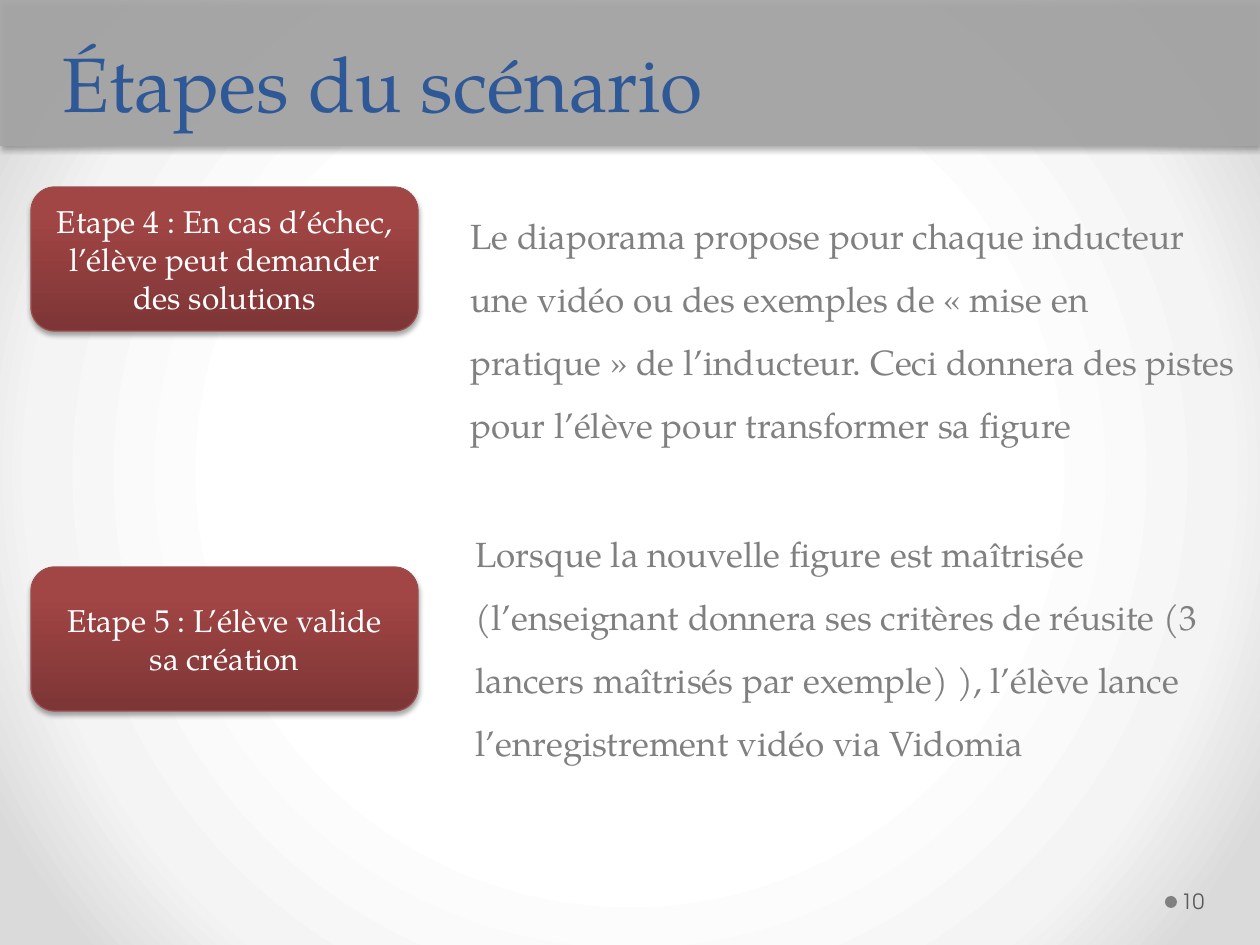
"""Build the slide on steps 4 and 5 of the teaching scenario."""
from pptx import Presentation
from pptx import util as u
from pptx.dml.color import RGBColor
from pptx.enum import shapes, text
from pptx.oxml import parse_xml
from pptx.oxml.ns import nsdecls

PX = 914400 / 126
NO_BREAK = chr(160)
SERIF, SANS = "TeX Gyre Pagella", "TeX Gyre Adventor"
BLUE = RGBColor(0x2F, 0x58, 0x97)
WHITE = RGBColor(0xFF, 0xFF, 0xFF)
BAND_GRAY = RGBColor(0xA6, 0xA6, 0xA6)
GRAY = RGBColor(0x80, 0x80, 0x80)
DARK_GRAY = RGBColor(0x59, 0x59, 0x59)
LIGHT_GRAY = RGBColor(0xF4, 0xF4, 0xF4)
EDGE_GRAY = RGBColor(0xDA, 0xDA, 0xDA)
DEEP_RED = RGBColor(0x7D, 0x35, 0x35)
RED = RGBColor(0xA2, 0x45, 0x45)
TOP_RED = RGBColor(0xA4, 0x43, 0x43)
RED_LINE = RGBColor(0x9A, 0x4E, 0x4E)

STEPS = [
    (187, "Etape 4 : En cas d’échec, l’élève peut demander des solutions",
     (458, 187), "Le diaporama propose pour chaque inducteur une vidéo ou des exemples "
     f"de «{NO_BREAK}mise en pratique{NO_BREAK}» de l’inducteur. Ceci donnera des pistes "
     "pour l’élève pour transformer sa figure"),
    (567, "Etape 5 : L’élève valide sa création",
     (463, 505), "Lorsque la nouvelle figure est maîtrisée (l’enseignant donnera ses "
     "critères de réusite (3 lancers maîtrisés par exemple) ), l’élève lance "
     "l’enregistrement vidéo via Vidomia"),
]


def px(*lengths):
    return [u.Emu(round(length * PX)) for length in lengths]


def gradient(stops, direction):
    stop_xml = "".join(
        f'<a:gs pos="{pos * 1000}"><a:srgbClr val="{color}"/></a:gs>' for pos, color in stops)
    return parse_xml(f'<a:gradFill {nsdecls("a")} rotWithShape="1">'
                     f'<a:gsLst>{stop_xml}</a:gsLst>{direction}</a:gradFill>')


def add_shadow(shape):
    shape._element.spPr.append(parse_xml(
        f'<a:effectLst {nsdecls("a")}><a:outerShdw blurRad="{u.Pt(3.1)}" dist="{u.Pt(1.8)}" '
        'dir="5400000" rotWithShape="0"><a:srgbClr val="000000"><a:alpha val="35000"/>'
        '</a:srgbClr></a:outerShdw></a:effectLst>'))


def write(frame, words, size, color, font=SERIF, align=text.PP_ALIGN.LEFT,
          anchor=text.MSO_ANCHOR.TOP, spacing=None):
    frame.word_wrap = True
    frame.vertical_anchor = anchor
    paragraph = frame.paragraphs[0]
    paragraph.alignment = align
    paragraph.line_spacing = spacing
    run = paragraph.add_run()
    run.text = words
    run.font.size = u.Pt(size)
    run.font.name = font
    run.font.color.rgb = color


def paint_background(slide):
    slide.background.fill.solid()
    properties = slide._element.xpath("./p:cSld/p:bg/p:bgPr")[0]
    glow = gradient([(50, WHITE), (76, LIGHT_GRAY), (92, EDGE_GRAY)],
                    '<a:path path="circle"><a:fillToRect l="50000" t="50000" '
                    'r="50000" b="50000"/></a:path>')
    properties.replace(properties[0], glow)


def add_plain(slide, kind, box, color):
    shape = slide.shapes.add_shape(kind, *px(*box))
    shape.shadow.inherit = False
    shape.fill.solid()
    shape.fill.fore_color.rgb = color
    shape.line.fill.background()
    return shape


def add_band(slide):
    band = add_plain(slide, shapes.MSO_SHAPE.RECTANGLE, (0, 0, 1260, 146), BAND_GRAY)
    band_color = band._element.spPr.xpath("./a:solidFill/a:srgbClr")[0]
    band_color.append(parse_xml(f'<a:alpha {nsdecls("a")} val="92000"/>'))
    band._element.spPr.remove(band._element.spPr.xpath("./a:effectLst")[0])
    add_shadow(band)
    slide.shapes._spTree.insert(2, band._element)


def add_title(slide, words):
    title = slide.shapes.title
    title.left, title.top, title.width, title.height = px(50, 12, 1177, 122)
    write(title.text_frame, words, 44, BLUE, anchor=text.MSO_ANCHOR.BOTTOM, spacing=u.Pt(58))


def add_page_number(slide, number):
    add_plain(slide, shapes.MSO_SHAPE.OVAL, (1165, 896, 12, 12), GRAY)
    box = slide.shapes.add_textbox(*px(1177, 876, 77, 50))
    box.text_frame.margin_left, box.text_frame.margin_right = px(4, 6)
    write(box.text_frame, number, 12, DARK_GRAY, SANS, anchor=text.MSO_ANCHOR.MIDDLE)


def add_step(slide, top, words):
    step = slide.shapes.add_shape(shapes.MSO_SHAPE.ROUNDED_RECTANGLE, *px(31, top, 387, 144))
    step.line.color.rgb = RED_LINE
    step.line.width = u.Pt(0.75)
    step._element.spPr.insert(2, gradient([(0, DEEP_RED), (80, RED), (100, TOP_RED)],
                                          '<a:lin ang="16200000" scaled="0"/>'))
    add_shadow(step)
    write(step.text_frame, words, 18, WHITE, align=text.PP_ALIGN.CENTER,
          anchor=text.MSO_ANCHOR.MIDDLE)


def add_explanation(slide, corner, words):
    box = slide.shapes.add_textbox(*px(*corner, 796, 267))
    write(box.text_frame, words, 20, GRAY, spacing=1.5)
    box.text_frame.auto_size = text.MSO_AUTO_SIZE.SHAPE_TO_FIT_TEXT


def main():
    deck = Presentation()
    deck.slide_width, deck.slide_height = px(1260, 945)
    slide = deck.slides.add_slide(deck.slide_layouts[5])
    paint_background(slide)
    add_band(slide)
    add_title(slide, "Étapes du scénario")
    add_page_number(slide, "10")
    for step_top, step, corner, explanation in STEPS:
        add_step(slide, step_top, step)
        add_explanation(slide, corner, explanation)
    deck.save("out.pptx")


if __name__ == "__main__":
    main()
